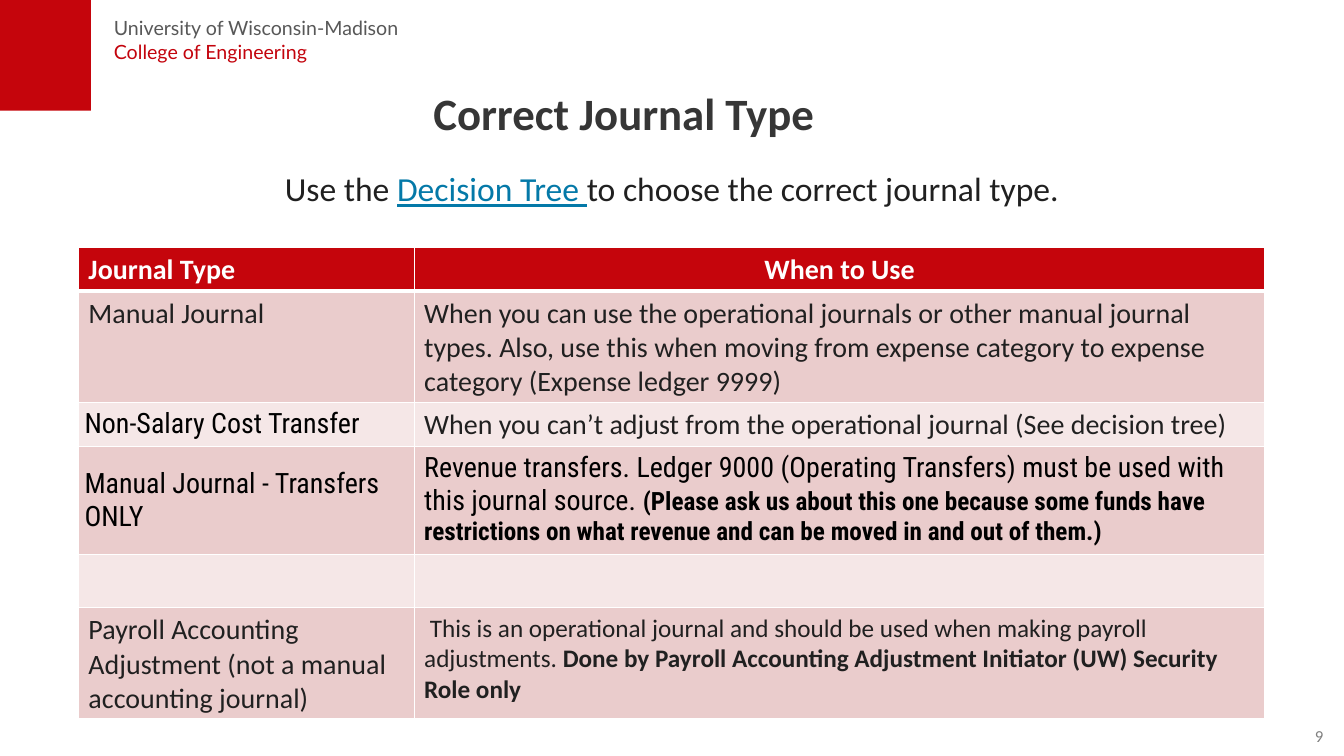
from copy import deepcopy

from lxml.etree import SubElement
from pptx import Presentation
from pptx.dml.color import RGBColor
from pptx.enum.shapes import MSO_SHAPE
from pptx.enum.text import MSO_ANCHOR, PP_ALIGN
from pptx.oxml.ns import qn
from pptx.util import Cm, Pt

RED = RGBColor(0xC5, 0x05, 0x0C)
COLLEGE_RED = RGBColor(0xC3, 0x03, 0x0C)
GREY = RGBColor(0x58, 0x58, 0x58)
PAGE_GREY = RGBColor(0x80, 0x80, 0x80)
TITLE_GREY = RGBColor(0x36, 0x36, 0x36)
INK = RGBColor(0x20, 0x20, 0x20)
BLACK = RGBColor(0, 0, 0)
WHITE = RGBColor(0xFF, 0xFF, 0xFF)
LINK_BLUE = RGBColor(0x04, 0x79, 0xA8)
BAND_DARK = RGBColor(0xEA, 0xCC, 0xCC)
BAND_LIGHT = RGBColor(0xF5, 0xE7, 0xE7)

CONDENSED = {"font": "Roboto Condensed", "color": BLACK}
NARROW = {**CONDENSED, "margins": (0.15, 0, 0, 0), "anchor": MSO_ANCHOR.MIDDLE}
HEADER = {"color": WHITE, "bold": True}

TITLE = "Correct Journal Type"
PAGE = "9"
UNIT = [("University of Wisconsin-Madison ", {}), ("\n", {}),
        ("College of Engineering", {"color": COLLEGE_RED})]
ADVICE = [("Use the ", {}),
          ("Decision Tree ", {"color": LINK_BLUE, "underline": True}),
          ("to choose the correct journal type.", {})]
JOURNALS = [
    (1.09, ("Journal Type", HEADER),
     ("When to Use", {**HEADER, "align": PP_ALIGN.CENTER})),
    (2.79, ("Manual Journal", {}),
     ("When you can use the operational journals or other manual journal types. "
      "Also, use this when moving from expense category to expense category "
      "(Expense ledger 9999)", {})),
    (1.09, ("Non-Salary Cost Transfer", NARROW),
     ("When you can’t adjust from the operational journal (See decision tree)", {})),
    (2.72, ("Manual Journal - Transfers ONLY", NARROW),
     ([("Revenue transfers. Ledger 9000 (Operating Transfers) must be used with "
        "this journal source. ", {}),
       ("(Please ask us about this one because some funds have restrictions on "
        "what revenue and can be moved in and out of them.)",
        {"size": 18, "bold": True})], CONDENSED)),
    (1.35, ("", {}), ("", {})),
    (2.79, ("Payroll Accounting Adjustment (not a manual accounting journal)", {}),
     ([(" This is an operational journal and should be used when making payroll "
        "adjustments.", {}),
       (" Done by Payroll Accounting Adjustment Initiator (UW) Security Role only",
        {"bold": True})], {"size": 18})),
]
COLUMN_WIDTHS = (8.46, 21.44)


def write(frame, content, align=PP_ALIGN.LEFT, spacing=None, **base):
    """Fill a text frame's first paragraph with formatted runs."""
    paragraph = frame.paragraphs[0]
    paragraph.alignment = align
    if spacing:
        paragraph.line_spacing = spacing
    runs = [(content, {})] if isinstance(content, str) else content
    for text, override in runs:
        if text == "\n":
            paragraph.add_line_break()
            paragraph._p[-1].append(deepcopy(run._r.rPr))
            continue
        look = {"font": "Calibri", "size": 20, "color": INK, "bold": False,
                "underline": False, **base, **override}
        run = paragraph.add_run()
        run.text = text
        run.font.name = look["font"]
        run.font.size = Pt(look["size"])
        run.font.color.rgb = look["color"]
        run.font.bold = look["bold"]
        run.font.underline = look["underline"]


def set_margins(holder, margins):
    """Set left, top, right and bottom margins in centimetres."""
    for side, margin in zip(("left", "top", "right", "bottom"), margins):
        setattr(holder, f"margin_{side}", Cm(margin))


def add_label(slide, box, margins, wrap=True, anchor=MSO_ANCHOR.TOP):
    """Add a text box and return its text frame."""
    frame = slide.shapes.add_textbox(*map(Cm, box)).text_frame
    frame.word_wrap = wrap
    frame.vertical_anchor = anchor
    set_margins(frame, margins)
    return frame


def add_borders(cell, row):
    """Draw white cell borders, thicker under the header row."""
    properties = cell._tc.get_or_add_tcPr()
    for side in "LRTB":
        thick = (row, side) in ((0, "B"), (1, "T"))
        line = SubElement(properties, qn(f"a:ln{side}"), w=str(Pt(3 if thick else 1)))
        fill = SubElement(line, qn("a:solidFill"))
        SubElement(fill, qn("a:srgbClr"), val=str(WHITE))


def add_journal_table(slide):
    """Build the table of journal types."""
    height = sum(journal[0] for journal in JOURNALS)
    table = slide.shapes.add_table(
        len(JOURNALS), len(COLUMN_WIDTHS), Cm(1.98), Cm(6.23),
        Cm(sum(COLUMN_WIDTHS)), Cm(height)).table
    for column, width in zip(table.columns, COLUMN_WIDTHS):
        column.width = Cm(width)
    for row, (row_height, *entries) in enumerate(JOURNALS):
        table.rows[row].height = Cm(row_height)
        band = RED if row == 0 else BAND_DARK if row % 2 else BAND_LIGHT
        for column, (content, look) in enumerate(entries):
            cell = table.cell(row, column)
            look = dict(look)
            set_margins(cell, look.pop("margins", (0.25, 0.13, 0.25, 0.13)))
            cell.vertical_anchor = look.pop("anchor", MSO_ANCHOR.TOP)
            add_borders(cell, row)
            cell.fill.solid()
            cell.fill.fore_color.rgb = band
            if content:
                write(cell.text_frame, content, **look)


def main():
    """Build and save the journal type slide."""
    deck = Presentation()
    deck.slide_width, deck.slide_height = Cm(33.87), Cm(19.05)
    slide = deck.slides.add_slide(deck.slide_layouts[5])

    corner = slide.shapes.add_shape(MSO_SHAPE.RECTANGLE, 0, 0, Cm(2.29), Cm(2.79))
    corner.shadow.inherit = False
    corner.fill.solid()
    corner.fill.fore_color.rgb = RED
    corner.line.fill.background()

    unit = add_label(slide, (2.87, 0.28, 11.96, 1.45), (0, 0.13, 0.25, 0.13))
    write(unit, UNIT, font="Lato", size=14, color=GREY)
    page = add_label(slide, (31.57, 18.03, 2.29, 1.02), (0, 0.13, 0.51, 0.13),
                     anchor=MSO_ANCHOR.MIDDLE)
    write(page, PAGE, align=PP_ALIGN.RIGHT, size=12, color=PAGE_GREY)

    title = slide.shapes.title
    title.left, title.top, title.width, title.height = map(
        Cm, (10.92, 2.16, 12.01, 1.35))
    title.text_frame.word_wrap = True
    title.text_frame.vertical_anchor = MSO_ANCHOR.BOTTOM
    set_margins(title.text_frame, (0, 0.13, 0, 0))
    write(title.text_frame, TITLE, spacing=0.8, size=32, color=TITLE_GREY, bold=True)

    advice = add_label(slide, (6.93, 4.11, 20.19, 1.27), (0.25, 0.13, 0.25, 0.13),
                       wrap=False)
    write(advice, ADVICE, size=24)
    add_journal_table(slide)
    deck.save("out.pptx")


if __name__ == "__main__":
    main()
